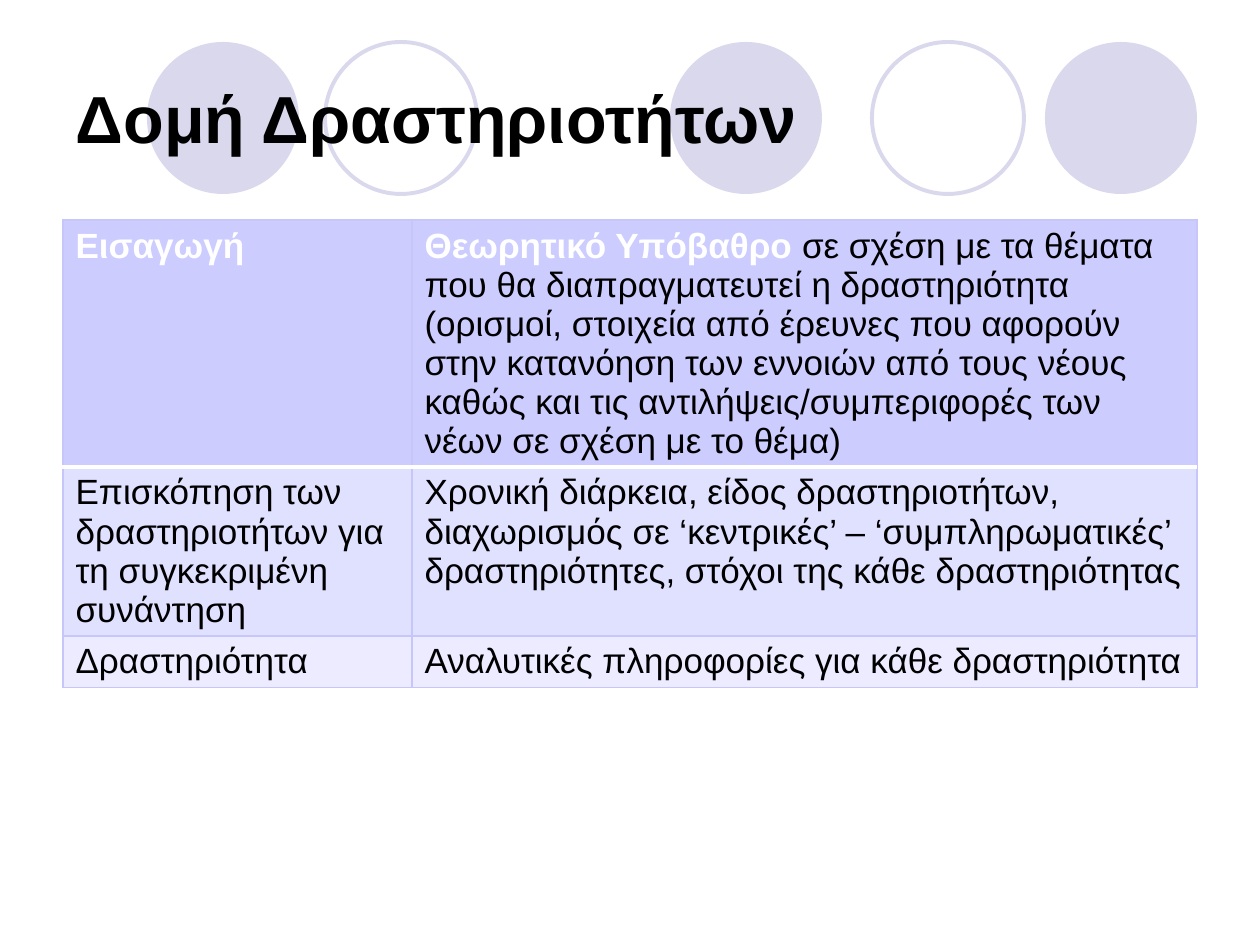
from lxml import etree
from pptx import Presentation
from pptx.dml.color import RGBColor
from pptx.enum.shapes import MSO_SHAPE
from pptx.enum.text import MSO_ANCHOR, MSO_AUTO_SIZE, PP_ALIGN
from pptx.oxml.ns import qn
from pptx.util import Pt

OVAL = MSO_SHAPE.OVAL
MIDDLE = MSO_ANCHOR.MIDDLE
LEFT = PP_ALIGN.LEFT
NO_FIT = MSO_AUTO_SIZE.NONE
EMU_PER_PX = 914400 / 126
TITLE_ONLY = 5

PALE, BORDER, WHITE, BLACK = "D9D8EC", "C6C6FB", "FFFFFF", "000000"
TITLE_FORMAT = {"name": "Arial", "size": Pt(38), "bold": True}
BODY_FORMAT = {"name": "Arial", "size": Pt(20), "bold": False}
HEAD_FORMAT = {**BODY_FORMAT, "bold": True}

CIRCLE_SIZE = 152
CIRCLES = [(607, True), (982, True), (84, True), (809, False), (262, False)]
COLUMN_WIDTHS = [349, 785]
ROW_HEIGHTS = [247, 169, 51]
ROW_FILLS = ["CCCCFF", "E0E0FF", "EDEBFF"]
HEAD, BODY = (HEAD_FORMAT, WHITE), (BODY_FORMAT, BLACK)
ROWS = [
    [[("Εισαγωγή", HEAD)],
     [("Θεωρητικό Υπόβαθρο ", HEAD),
      ("σε σχέση με τα θέματα που θα διαπραγματευτεί η δραστηριότητα "
       "(ορισμοί, στοιχεία από έρευνες που αφορούν στην κατανόηση των "
       "εννοιών από τους νέους καθώς και τις αντιλήψεις/συμπεριφορές των "
       "νέων σε σχέση με το θέμα)", BODY)]],
    [[("Επισκόπηση των δραστηριοτήτων για τη συγκεκριμένη συνάντηση", BODY)],
     [("Χρονική διάρκεια, είδος δραστηριοτήτων, διαχωρισμός σε ‘κεντρικές’ – "
       "‘συμπληρωματικές’ δραστηριότητες, στόχοι της κάθε δραστηριότητας",
       BODY)]],
    [[("Δραστηριότητα", BODY)],
     [("Αναλυτικές πληροφορίες για κάθε δραστηριότητα", BODY)]],
]


def px(length):
    """Turn pixels into EMU."""
    return round(length * EMU_PER_PX)


def color(value):
    """Turn a hex string into a colour."""
    return RGBColor.from_string(value)


def add_span(para, text, formats, ink):
    """Add a formatted run of text to a paragraph."""
    span = para.add_run()
    span.text = text
    for name, value in formats.items():
        setattr(span.font, name, value)
    span.font.color.rgb = color(ink)


def add_circles(page, box):
    """Place the row of filled and outlined circles."""
    left, top = box[:2]
    for offset, filled in CIRCLES:
        circle = page.shapes.add_shape(
            OVAL, px(left + offset), px(top), px(CIRCLE_SIZE), px(CIRCLE_SIZE))
        circle.shadow.inherit = False
        if filled:
            circle.fill.solid()
            circle.fill.fore_color.rgb = color(PALE)
            circle.line.fill.background()
        else:
            circle.fill.background()
            circle.line.color.rgb = color(PALE)
            circle.line.width = Pt(2.25)


def place_title(page, box, text):
    """Move the title placeholder to its box, in front of the circles."""
    title = page.shapes.title
    title.left, title.top, title.width, title.height = map(px, box)
    title.element.getparent().append(title.element)
    frame = title.text_frame
    frame.auto_size = NO_FIT
    frame.word_wrap = True
    frame.vertical_anchor = MIDDLE
    para = frame.paragraphs[0]
    para.alignment = LEFT
    add_span(para, text, TITLE_FORMAT, BLACK)


def add_border(cell, side, ink, width):
    """Draw one side of a cell."""
    line = etree.SubElement(cell._tc.get_or_add_tcPr(), qn(f"a:ln{side}"),
                            w=str(Pt(width)))
    fill = etree.SubElement(line, qn("a:solidFill"))
    etree.SubElement(fill, qn("a:srgbClr"), val=ink)


def fill_cell(cell, spans, row_index):
    """Give a cell its borders, background and text."""
    divided_side = {0: "B", 1: "T"}.get(row_index)
    for side in "LRTB":
        ink, width = (WHITE, 2) if side == divided_side else (BORDER, 0.75)
        add_border(cell, side, ink, width)
    cell.fill.solid()
    cell.fill.fore_color.rgb = color(ROW_FILLS[row_index])
    for text, (formats, ink) in spans:
        add_span(cell.text_frame.paragraphs[0], text, formats, ink)


def add_activity_table(page, box):
    """Build the table of activity parts."""
    table = page.shapes.add_table(
        len(ROWS), len(COLUMN_WIDTHS), *map(px, box)).table
    for column, width in zip(table.columns, COLUMN_WIDTHS):
        column.width = px(width)
    for row_index, (row, height) in enumerate(zip(table.rows, ROW_HEIGHTS)):
        row.height = px(height)
        for cell, spans in zip(row.cells, ROWS[row_index]):
            fill_cell(cell, spans, row_index)


def main():
    """Build and save the deck."""
    deck = Presentation()
    deck.slide_width, deck.slide_height = px(1260), px(945)
    page = deck.slides.add_slide(deck.slide_layouts[TITLE_ONLY])
    add_circles(page, (63, 42, 1134, CIRCLE_SIZE))
    place_title(page, (63, 38, 1134, 158), "Δομή Δραστηριοτήτων")
    add_activity_table(
        page, (63, 220, sum(COLUMN_WIDTHS), sum(ROW_HEIGHTS)))
    deck.save("out.pptx")


if __name__ == "__main__":
    main()
